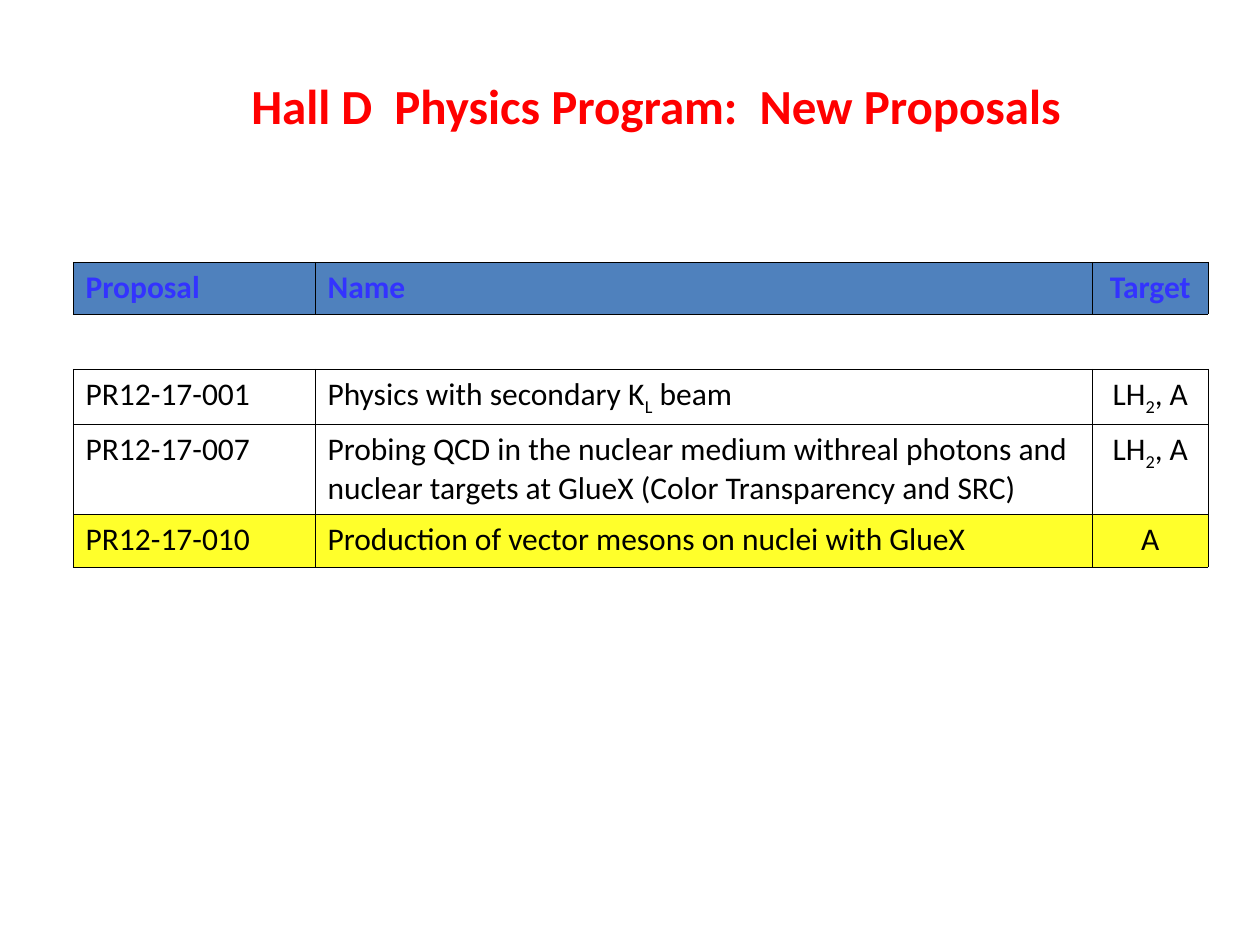
from dataclasses import dataclass

from lxml import etree
from pptx import Presentation
from pptx.dml.color import RGBColor
from pptx.enum import text
from pptx.oxml import ns
from pptx.util import Inches, Pt

FONT = "Calibri"
COLORS = {
    "title": "FF0000",
    "heading": "3333FF",
    "body": "000000",
    "border": "000000",
    "header_fill": "4F81BD",
    "plain_fill": "FFFFFF",
    "highlight": "FFFF00",
}
COLUMN_WIDTHS = (1.92, 6.17, 0.92)
TARGET_COLUMN = 2


@dataclass
class Row:
    """One table row; text between underscores is set as a subscript."""
    cells: tuple[str, str, str]
    height: float
    fill: str = "plain_fill"
    color: str = "body"
    bold: bool = False
    opacity: int = 100
    sides: str = "LRTB"


ROWS = [
    Row(("Proposal", "Name", "Target"), 0.41, "header_fill", "heading", bold=True),
    Row(("", "", ""), 0.44, sides="TB"),
    Row(("PR12-17-001", "Physics with secondary K_L_ beam", "LH_2_, A"), 0.44),
    Row(("PR12-17-007",
         "Probing QCD in the nuclear medium withreal photons and nuclear targets "
         "at GlueX (Color Transparency and SRC)",
         "LH_2_, A"), 0.71),
    Row(("PR12-17-010", "Production of vector mesons on nuclei with GlueX", "A"),
        0.42, "highlight", opacity=83),
]


def style_font(font, size: float, color: str, bold: bool) -> None:
    font.name = FONT
    font.size = Pt(size)
    font.bold = bold
    font.color.rgb = RGBColor.from_string(COLORS[color])


def set_borders(cell, sides: str) -> None:
    properties = cell._tc.get_or_add_tcPr()
    for index, side in enumerate("LRTB"):
        line = etree.Element(ns.qn(f"a:ln{side}"), w=str(Pt(0.25)))
        if side in sides:
            fill = etree.SubElement(line, ns.qn("a:solidFill"))
            etree.SubElement(fill, ns.qn("a:srgbClr"), val=COLORS["border"])
        else:
            etree.SubElement(line, ns.qn("a:noFill"))
        properties.insert(index, line)


def set_fill(cell, color: str, opacity: int) -> None:
    cell.fill.solid()
    cell.fill.fore_color.rgb = RGBColor.from_string(COLORS[color])
    if opacity < 100:
        tint = cell._tc.tcPr.find(".//" + ns.qn("a:srgbClr"))
        etree.SubElement(tint, ns.qn("a:alpha"), val=str(opacity * 1000))


def fill_cell(cell, content: str, row: Row, centered: bool) -> None:
    set_fill(cell, row.fill, row.opacity)
    set_borders(cell, row.sides)
    para = cell.text_frame.paragraphs[0]
    if centered:
        para.alignment = text.PP_ALIGN.CENTER
    style_font(para.font, 18, row.color, row.bold)
    for index, part in enumerate(content.split("_")):
        if not part:
            continue
        span = para.add_run()
        span.text = part
        style_font(span.font, 18, row.color, row.bold)
        if index % 2:
            span._r.get_or_add_rPr().set("baseline", "-25000")


def add_proposals(page) -> None:
    frame = page.shapes.add_table(
        len(ROWS), len(COLUMN_WIDTHS), Inches(0.58), Inches(2.08),
        Inches(sum(COLUMN_WIDTHS)), Inches(sum(row.height for row in ROWS)))
    table = frame.table
    table.first_row = False
    table.horz_banding = False
    for column, width in zip(table.columns, COLUMN_WIDTHS):
        column.width = Inches(width)
    for row, table_row in zip(ROWS, table.rows):
        table_row.height = Inches(row.height)
        for index, (cell, content) in enumerate(zip(table_row.cells, row.cells)):
            fill_cell(cell, content, row, centered=index == TARGET_COLUMN)


def add_title(page) -> None:
    title = page.shapes.title
    title.left, title.top = Inches(1), Inches(0.5)
    title.width, title.height = Inches(8.5), Inches(0.67)
    frame = title.text_frame
    frame.text = "Hall D  Physics Program:  New Proposals "
    frame.vertical_anchor = text.MSO_ANCHOR.MIDDLE
    para = frame.paragraphs[0]
    para.alignment = text.PP_ALIGN.CENTER
    style_font(para.runs[0].font, 28, "title", bold=True)


def main() -> None:
    deck = Presentation()
    deck.slide_width, deck.slide_height = Inches(10), Inches(7.5)
    page = deck.slides.add_slide(deck.slide_layouts[5])
    add_proposals(page)
    add_title(page)
    deck.save("out.pptx")


if __name__ == "__main__":
    main()
